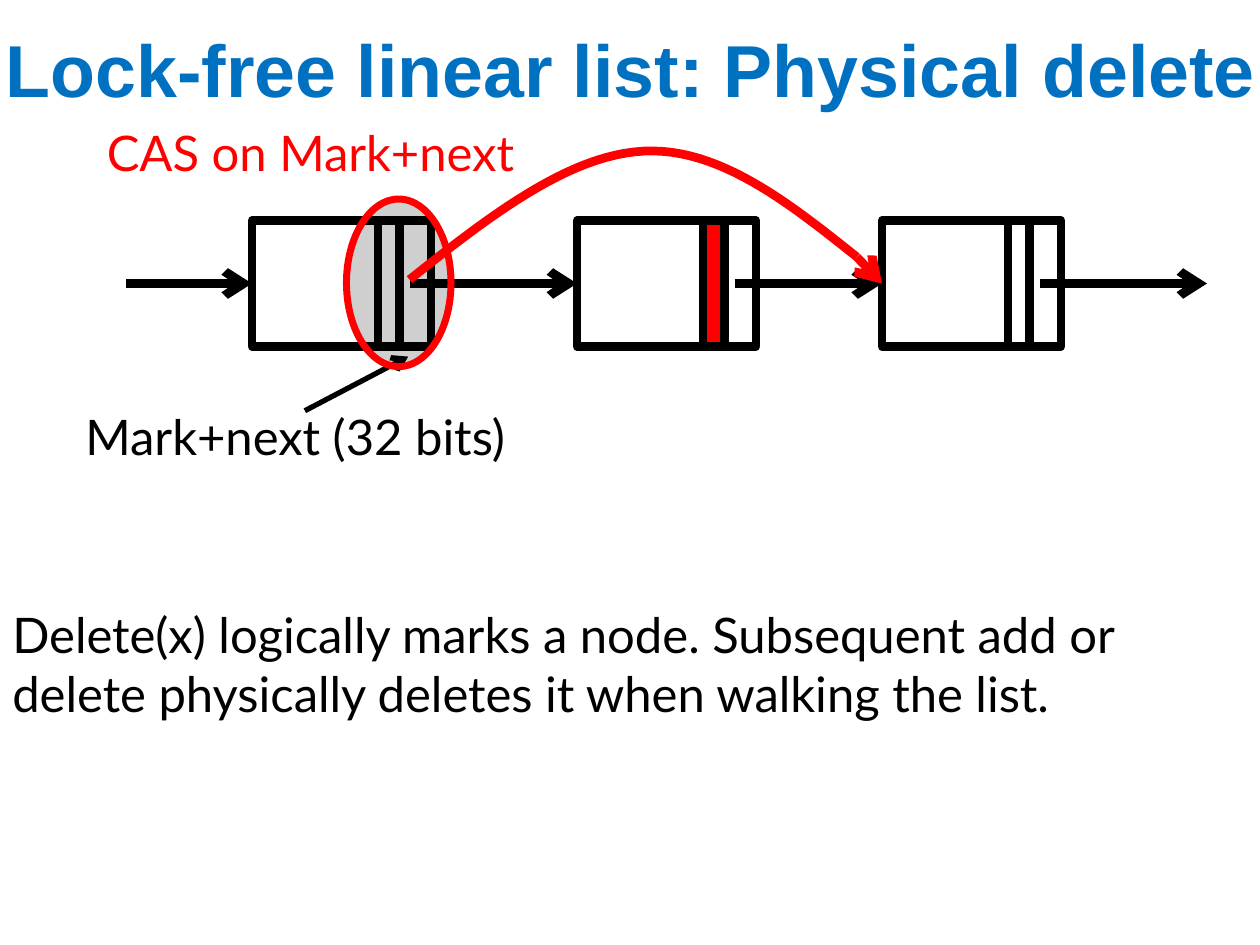
from dataclasses import dataclass

from lxml.etree import SubElement
from pptx import Presentation
from pptx.dml.color import RGBColor
from pptx.enum.shapes import MSO_CONNECTOR as Connector, MSO_SHAPE as Shape
from pptx.enum.text import MSO_ANCHOR as Anchor, MSO_AUTO_SIZE as AutoSize, PP_ALIGN as Align
from pptx.oxml.ns import qn
from pptx.util import Inches, Pt

BLACK, RED, BLUE = "000000", "FF0000", "0070C0"
LEFT_SIDE = 1
NODE_LEFTS = (2, 4.58, 7)
NODE_TOP, NODE_WIDTH, NODE_HEIGHT = 1.75, 1.42, 1
NODE_BOTTOM, NODE_MIDDLE = NODE_TOP + NODE_HEIGHT, NODE_TOP + NODE_HEIGHT / 2
MARK_OFFSET, MARK_WIDTH, NEXT_OFFSET = 1, 0.17, 1.25
BYPASS_CURVES = (
    ((3.25, 2.22), (3.88, 1.72), (4.51, 1.23), (5.11, 1.2)),
    ((5.11, 1.2), (5.7, 1.17), (6.25, 1.6), (6.8, 2.04)),
)


def color(value):
    return RGBColor.from_string(value)


def curve_points(controls, steps=24):
    for step in range(1, steps + 1):
        t = step / steps
        weights = ((1 - t) ** 3, 3 * t * (1 - t) ** 2, 3 * t * t * (1 - t), t ** 3)
        yield tuple(Inches(sum(w * p[axis] for w, p in zip(weights, controls))) for axis in (0, 1))


@dataclass
class ListDiagram:
    """Draws linked-list parts on the current slide in one shared style."""

    slide: object
    font: str = "Lato"
    size: float = 28
    line_width: float = 5

    def outline(self, shape, line, width=None):
        shape.line.color.rgb = color(line)
        shape.line.width = Pt(width or self.line_width)

    def shape(self, kind, box, line=BLACK, fill=None, alpha=None, width=None):
        shape = self.slide.shapes.add_shape(kind, *map(Inches, box))
        shape.shadow.inherit = False
        self.outline(shape, line, width)
        if fill is None:
            shape.fill.background()
        else:
            shape.fill.solid()
            shape.fill.fore_color.rgb = color(fill)
        if alpha:
            fill_color = shape.fill._xPr.find(qn("a:solidFill"))[0]
            SubElement(fill_color, qn("a:alpha"), val=str(alpha * 1000))
        return shape

    def line(self, start, end, line=BLACK, width=None, arrow=False, target=None):
        connector = self.slide.shapes.add_connector(
            Connector.STRAIGHT, *map(Inches, (*start, *end)))
        self.outline(connector, line, width)
        if arrow:
            SubElement(connector.line._get_or_add_ln(), qn("a:tailEnd"), type="arrow")
        SubElement(connector._element.spPr, qn("a:effectLst"))
        if target is not None:
            connector.end_connect(target, LEFT_SIDE)

    def curve(self, segments, line):
        builder = self.slide.shapes.build_freeform(*map(Inches, segments[0][0]))
        for controls in segments:
            builder.add_line_segments(list(curve_points(controls)), close=False)
        shape = builder.convert_to_shape()
        shape.shadow.inherit = False
        shape.fill.background()
        self.outline(shape, line)

    def text(self, words, box, fill=BLACK, wrap=False, align=Align.LEFT, frame_format=None, **font_format):
        frame = self.slide.shapes.add_textbox(*map(Inches, box)).text_frame
        frame_values = {"word_wrap": wrap, "auto_size": AutoSize.SHAPE_TO_FIT_TEXT}
        for name, value in (frame_values | (frame_format or {})).items():
            setattr(frame, name, value)
        paragraph = frame.paragraphs[0]
        paragraph.alignment = align
        run = paragraph.add_run()
        run.text = words
        run.font.color.rgb = color(fill)
        for name, value in ({"name": self.font, "size": Pt(self.size)} | font_format).items():
            setattr(run.font, name, value)


def main():
    presentation = Presentation()
    presentation.slide_width, presentation.slide_height = Inches(10), Inches(7.5)
    diagram = ListDiagram(presentation.slides.add_slide(presentation.slide_layouts[6]))

    diagram.text("Lock-free linear list: Physical delete", (-0.33, 0, 10.67, 1.08), BLUE,
                 wrap=True, align=Align.CENTER,
                 frame_format={"vertical_anchor": Anchor.MIDDLE, "auto_size": AutoSize.NONE},
                 name="Arial", size=Pt(42), bold=True)

    nodes = [diagram.shape(Shape.RECTANGLE, (left, NODE_TOP, NODE_WIDTH, NODE_HEIGHT))
             for left in NODE_LEFTS]
    first, deleted, last = NODE_LEFTS
    for left in (first, last):
        for x in (left + MARK_OFFSET, left + MARK_OFFSET + MARK_WIDTH):
            diagram.line((x, NODE_TOP), (x, NODE_BOTTOM))
    diagram.shape(Shape.RECTANGLE, (deleted + MARK_OFFSET, NODE_TOP, MARK_WIDTH, NODE_HEIGHT), fill=RED)

    link_starts = (1, *(left + NEXT_OFFSET for left in NODE_LEFTS))
    for start, end, target in zip(link_starts, (*NODE_LEFTS, 9.58), (*nodes, None)):
        diagram.line((start, NODE_MIDDLE), (end, NODE_MIDDLE), arrow=True, target=target)

    diagram.text("Mark+next (32 bits)", (0.58, 3.18, 3.68, 0.57))
    diagram.line((2.42, 3.26), (3.24, 2.83), width=3, arrow=True)
    diagram.text("CAS on Mark+next", (0.75, 0.92, 3.46, 0.57), RED)
    diagram.shape(Shape.OVAL, (2.75, 1.58, 0.83, 1.33), RED, fill=BLACK, alpha=19, width=4)

    diagram.curve(BYPASS_CURVES, RED)
    diagram.line(BYPASS_CURVES[-1][-1], (last, NODE_MIDDLE), RED, arrow=True, target=nodes[-1])

    diagram.text("Delete(x) logically marks a node. Subsequent add or delete physically "
                 "deletes it when walking the list.", (0, 4.75, 10, 1.04), wrap=True)
    presentation.save("out.pptx")


if __name__ == "__main__":
    main()
